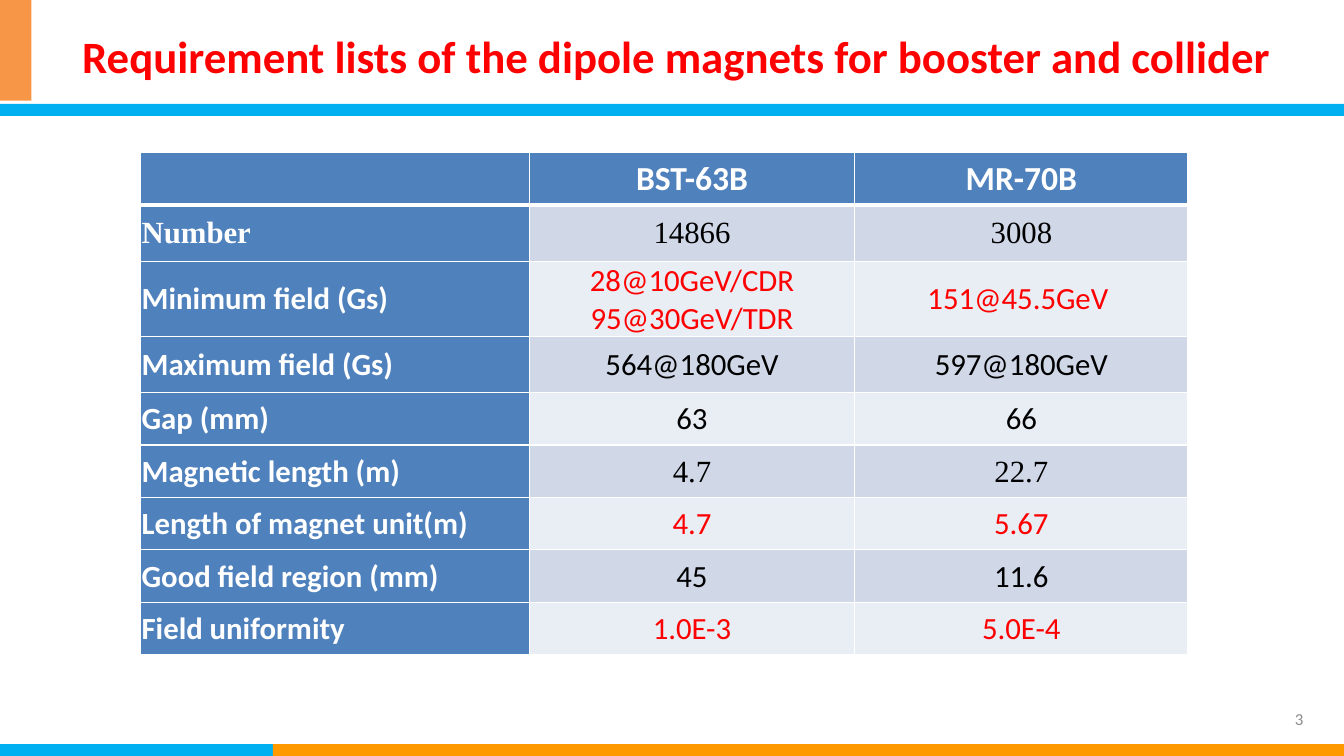
from dataclasses import dataclass

from lxml.etree import SubElement
from pptx import Presentation
from pptx.dml.color import RGBColor
from pptx.enum.shapes import MSO_SHAPE
from pptx.enum.text import MSO_ANCHOR, MSO_AUTO_SIZE, PP_ALIGN
from pptx.oxml.ns import qn
from pptx.slide import Slide
from pptx.table import _Cell
from pptx.text.text import TextFrame
from pptx.util import Cm, Pt

WHITE = "FFFFFF"
BLACK = "000000"
RED = "FF0000"
HEADER_BLUE = "4F81BD"
BAND_FILLS = ("D0D8E8", "E9EDF4")
SANS = "Calibri"
SERIF = "Times New Roman"
COLUMN_WIDTHS = (9.8, 8.2, 8.4)


@dataclass(frozen=True)
class Bar:
    left: float
    top: float
    width: float
    height: float
    color: str


@dataclass(frozen=True)
class TextStyle:
    size: int
    color: str
    bold: bool = False
    font: str = SANS
    alignment: PP_ALIGN = PP_ALIGN.CENTER


@dataclass(frozen=True)
class Requirement:
    label: str
    booster: str
    collider: str
    height: float = 1.32
    color: str = BLACK
    label_font: str = SANS
    value_font: str = SANS


BARS = (
    Bar(0, 18.75, 33.87, 0.3, "00B0F0"),
    Bar(6.88, 18.75, 26.99, 0.3, "FF9900"),
    Bar(0, 2.62, 33.87, 0.3, "00B0F0"),
    Bar(0, 0, 0.79, 2.54, "F79646"),
)

REQUIREMENTS = (
    Requirement("Number", "14866", "3008", 1.42, label_font=SERIF, value_font=SERIF),
    Requirement("Minimum field (Gs)", "28@10GeV/CDR\n95@30GeV/TDR", "151@45.5GeV ", 1.42, RED),
    Requirement("Maximum field (Gs)", "564@180GeV", "597@180GeV", 1.42),
    Requirement("Gap (mm)", "63", "66"),
    Requirement("Magnetic length (m)", "4.7", "22.7", value_font=SERIF),
    Requirement("Length of magnet unit(m)", "4.7", "5.67", color=RED),
    Requirement("Good field region (mm)", "45", "11.6"),
    Requirement("Field uniformity", "1.0E-3", "5.0E-4", color=RED),
)


def rgb(color: str) -> RGBColor:
    return RGBColor.from_string(color)


def write_text(frame: TextFrame, text: str, style: TextStyle) -> None:
    frame.text = text
    for paragraph in frame.paragraphs:
        paragraph.alignment = style.alignment
        paragraph.font.name = style.font
        paragraph.font.size = Pt(style.size)
        paragraph.font.bold = style.bold
        paragraph.font.color.rgb = rgb(style.color)


def add_bar(slide: Slide, bar: Bar) -> None:
    shape = slide.shapes.add_shape(
        MSO_SHAPE.RECTANGLE, Cm(bar.left), Cm(bar.top), Cm(bar.width), Cm(bar.height)
    )
    shape.shadow.inherit = False
    shape.fill.solid()
    shape.fill.fore_color.rgb = rgb(bar.color)
    shape.line.fill.background()


def add_title(slide: Slide) -> None:
    title = slide.shapes.title
    title.left, title.top, title.width, title.height = Cm(1.09), Cm(0.48), Cm(31.93), Cm(2.03)
    title.fill.solid()
    title.fill.fore_color.rgb = rgb(WHITE)
    frame = title.text_frame
    frame.auto_size = MSO_AUTO_SIZE.NONE
    frame.vertical_anchor = MSO_ANCHOR.MIDDLE
    write_text(
        frame,
        "Requirement lists of the dipole magnets for booster and collider",
        TextStyle(32, RED, True),
    )
    frame.paragraphs[0].line_spacing = 0.9


def add_page_number(slide: Slide) -> None:
    box = slide.shapes.add_textbox(Cm(25.2), Cm(17.6), Cm(7.9), Cm(1.02))
    frame = box.text_frame
    frame.word_wrap = True
    frame.vertical_anchor = MSO_ANCHOR.MIDDLE
    write_text(frame, "3", TextStyle(12, "8C8C8C", alignment=PP_ALIGN.RIGHT))


def set_borders(cell: _Cell, top: int, bottom: int) -> None:
    properties = cell._tc.get_or_add_tcPr()
    for side, width in (("L", 1), ("R", 1), ("T", top), ("B", bottom)):
        line = SubElement(properties, qn(f"a:ln{side}"), w=str(Pt(width)))
        solid = SubElement(line, qn("a:solidFill"))
        SubElement(solid, qn("a:srgbClr"), val=WHITE)


def format_cell(
    cell: _Cell, text: str, style: TextStyle, fill: str, top: int = 1, bottom: int = 1
) -> None:
    set_borders(cell, top, bottom)
    cell.fill.solid()
    cell.fill.fore_color.rgb = rgb(fill)
    cell.margin_left = cell.margin_right = cell.margin_top = Cm(0.03)
    cell.margin_bottom = 0
    cell.vertical_anchor = MSO_ANCHOR.MIDDLE
    write_text(cell.text_frame, text, style)


def add_requirement_table(slide: Slide) -> None:
    heights = [1.32] + [requirement.height for requirement in REQUIREMENTS]
    table = slide.shapes.add_table(
        len(heights), len(COLUMN_WIDTHS), Cm(3.54), Cm(3.84),
        Cm(sum(COLUMN_WIDTHS)), Cm(sum(heights)),
    ).table
    table.first_col = True
    for column, width in zip(table.columns, COLUMN_WIDTHS):
        column.width = Cm(width)
    for row, height in zip(table.rows, heights):
        row.height = Cm(height)
    for column_index, heading in enumerate(("", "BST-63B", "MR-70B")):
        format_cell(
            table.cell(0, column_index), heading, TextStyle(24, WHITE, True), HEADER_BLUE, bottom=3
        )
    for row_index, requirement in enumerate(REQUIREMENTS, 1):
        top = 3 if row_index == 1 else 1
        label_style = TextStyle(22, WHITE, True, requirement.label_font, PP_ALIGN.LEFT)
        format_cell(table.cell(row_index, 0), requirement.label, label_style, HEADER_BLUE, top)
        value_style = TextStyle(22, requirement.color, font=requirement.value_font)
        band = BAND_FILLS[(row_index - 1) % 2]
        for column_index, value in enumerate((requirement.booster, requirement.collider), 1):
            format_cell(table.cell(row_index, column_index), value, value_style, band, top)


def main() -> None:
    presentation = Presentation()
    presentation.slide_width = Cm(33.87)
    presentation.slide_height = Cm(19.05)
    slide = presentation.slides.add_slide(presentation.slide_layouts[5])
    for bar in BARS:
        add_bar(slide, bar)
    add_page_number(slide)
    add_title(slide)
    add_requirement_table(slide)
    presentation.save("out.pptx")


if __name__ == "__main__":
    main()
